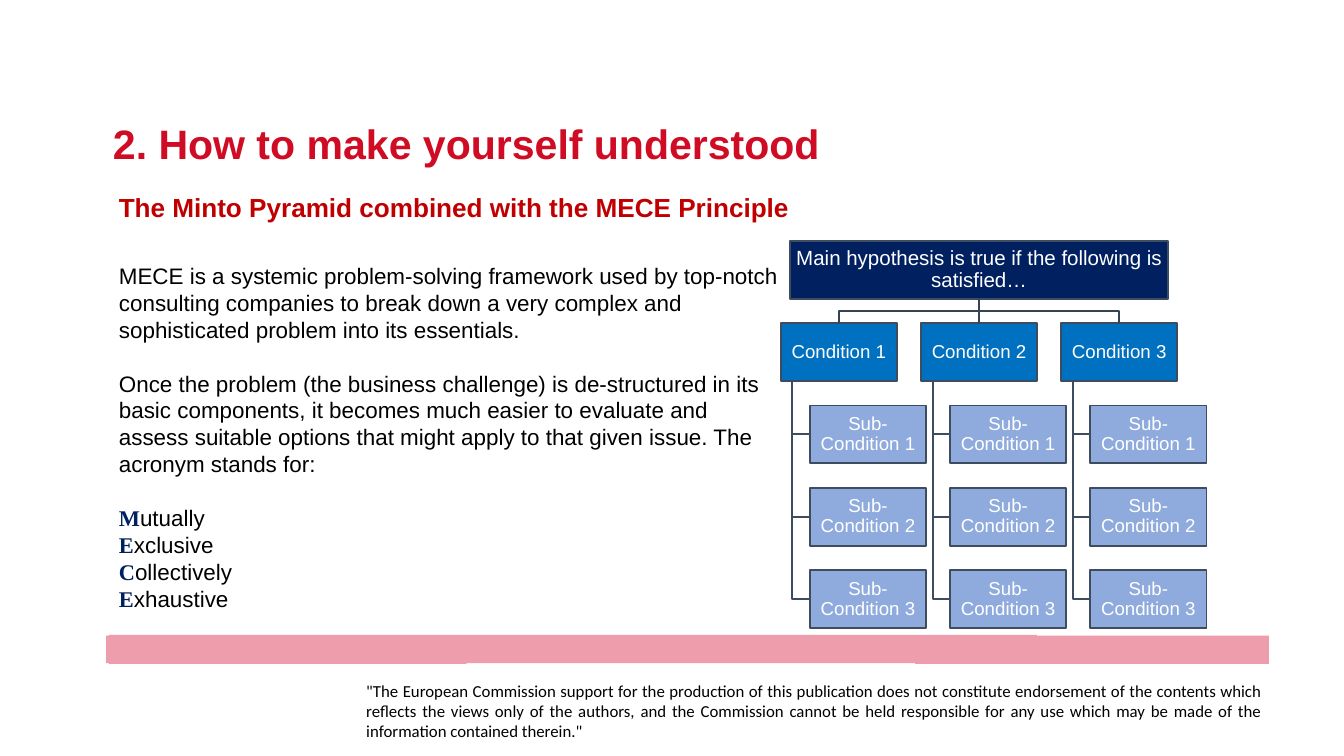
from lxml import etree
from pptx import Presentation
from pptx.dml.color import RGBColor
from pptx.enum.shapes import MSO_CONNECTOR, MSO_SHAPE
from pptx.enum.text import MSO_ANCHOR, MSO_AUTO_SIZE, PP_ALIGN
from pptx.oxml.ns import qn
from pptx.util import Pt

RECT, STRAIGHT = MSO_SHAPE.RECTANGLE, MSO_CONNECTOR.STRAIGHT
TOP, MIDDLE = MSO_ANCHOR.TOP, MSO_ANCHOR.MIDDLE
LEFT, CENTER, JUSTIFY = PP_ALIGN.LEFT, PP_ALIGN.CENTER, PP_ALIGN.JUSTIFY
NO_FIT = MSO_AUTO_SIZE.NONE

# Content
TITLE = "2. How to make yourself understood"
SUBTITLE = "The Minto Pyramid combined with the MECE Principle"
INTRO = [
    "MECE is a systemic problem-solving framework used by top-notch consulting "
    "companies to break down a very complex and sophisticated problem into its essentials.",
    "Once the problem (the business challenge) is de-structured in its basic components, "
    "it becomes much easier to evaluate and assess suitable options that might apply to "
    "that given issue. The acronym stands for:",
]
ACRONYM = ["Mutually", "Exclusive", "Collectively", "Exhaustive"]
HYPOTHESIS = "Main hypothesis is true if the following is satisfied…"
CONDITIONS = ["Condition 1", "Condition 2", "Condition 3"]
SUB_CONDITIONS = ["Sub-Condition 1", "Sub-Condition 2", "Sub-Condition 3"]
DISCLAIMER = (
    '"The European Commission support for the production of this publication does not '
    "constitute endorsement of the contents which reflects the views only of the authors, "
    "and the Commission cannot be held responsible for any use which may be made of the "
    'information contained therein."'
)

THEME = {
    "font": "Arial", "initial_font": "Times New Roman", "footer_font": "Calibri",
    "title": "D00B24", "subtitle": "C00000", "text": "000000", "light": "FFFFFF",
    "navy": "002060", "blue": "0070C0", "pale": "8FAADC",
    "outline": "3E4C60", "branch": "364355", "band": "ED9DAB",
    "title_size": 44, "subtitle_size": 28, "body_size": 24,
    "main_size": 22, "box_size": 20, "footer_size": 18,
    "line": 2, "gap": 28.8,
}

# Tree grid, in points
CENTRE_X, TREE_TOP = 1049, 258
MAIN_W, BOX_W, BOX_H = 404.6, 124.6, 62
COL_PITCH, ROW_PITCH = 150.2, 88.2
SUB_INDENT, TRUNK_INDENT = 31.2, 12.5

# Band outline, in points
BAND = [(1359.4, 681), (1111, 681), (1111, 680.3), (116.6, 680.3), (116.6, 681),
        (113.8, 681), (113.8, 710.6), (116.6, 710.6), (116.6, 711.4), (499.7, 711.4),
        (499.7, 710.6), (980.6, 710.6), (980.6, 711.4), (1359.4, 711.4)]


def rgb(name):
    return RGBColor.from_string(THEME[name])


def write(tf, paragraphs, size, color="text", font="font", bold=False, align=LEFT,
          anchor=TOP, inset=(7.2, 3.6), spacing=1.0, gaps=()):
    """Fill a frame; a paragraph is a string or a list of (text, run format) pairs."""
    tf.word_wrap, tf.auto_size, tf.vertical_anchor = True, NO_FIT, anchor
    tf.margin_left = tf.margin_right = Pt(inset[0])
    tf.margin_top = tf.margin_bottom = Pt(inset[1])
    for i, runs in enumerate(paragraphs):
        p = tf.paragraphs[0] if i == 0 else tf.add_paragraph()
        pPr = p._p.get_or_add_pPr()
        pPr.set("marL", "0")
        pPr.set("indent", "0")
        etree.SubElement(pPr, qn("a:buNone"))
        p.alignment, p.line_spacing = align, spacing
        p.space_before = Pt(THEME["gap"] if i in gaps else 0)
        for text, style in [(runs, {})] if isinstance(runs, str) else runs:
            r = p.add_run()
            r.text = text
            r.font.size = Pt(THEME[size])
            r.font.name = THEME[style.get("font", font)]
            r.font.bold = style.get("bold", bold)
            r.font.color.rgb = rgb(style.get("color", color))


def place(sp, x, y, w, h):
    sp.left, sp.top, sp.width, sp.height = Pt(x), Pt(y), Pt(w), Pt(h)
    return sp.text_frame


def text_box(s, x, y, w, h):
    return s.shapes.add_textbox(Pt(x), Pt(y), Pt(w), Pt(h)).text_frame


def box(s, text, x, y, w, fill, size="box_size", inset=0.9):
    sp = s.shapes.add_shape(RECT, Pt(x), Pt(y), Pt(w), Pt(BOX_H))
    sp.shadow.inherit = False
    sp.fill.solid()
    sp.fill.fore_color.rgb = rgb(fill)
    sp.line.color.rgb = rgb("outline")
    sp.line.width = Pt(THEME["line"])
    write(sp.text_frame, [text], size, color="light", align=CENTER, anchor=MIDDLE,
          inset=(inset, inset), spacing=0.9)
    return sp


def outline(s, points, close=False):
    start, *rest = [(Pt(x), Pt(y)) for x, y in points]
    builder = s.shapes.build_freeform(*start)
    builder.add_line_segments(rest, close=close)
    sp = builder.convert_to_shape()
    sp.shadow.inherit = False
    return sp


def elbow(s, points, color):
    sp = outline(s, points)
    sp.fill.background()
    sp.line.color.rgb = rgb(color)
    sp.line.width = Pt(THEME["line"])


def join(s, upper, lower):
    line = s.shapes.add_connector(STRAIGHT, 0, 0, 0, 0)
    line.begin_connect(upper, 2)
    line.end_connect(lower, 0)
    line.line.color.rgb = rgb("branch")
    line.line.width = Pt(THEME["line"])
    etree.SubElement(line._element.spPr, qn("a:effectLst"))


def draw_tree(s):
    main = box(s, HYPOTHESIS, CENTRE_X - MAIN_W / 2, TREE_TOP, MAIN_W, "navy",
               size="main_size", inset=1.4)
    main_bottom, row_top = TREE_TOP + BOX_H, TREE_TOP + ROW_PITCH
    bus_y = (main_bottom + row_top) / 2
    middle = len(CONDITIONS) // 2
    for col, condition in enumerate(CONDITIONS):
        cx = CENTRE_X + (col - middle) * COL_PITCH
        x = cx - BOX_W / 2
        head = box(s, condition, x, row_top, BOX_W, "blue")
        if col == middle:
            join(s, main, head)
        else:
            elbow(s, [(CENTRE_X, main_bottom), (CENTRE_X, bus_y), (cx, bus_y),
                      (cx, row_top)], "branch")
        for row, sub in enumerate(SUB_CONDITIONS, start=1):
            y = row_top + row * ROW_PITCH
            box(s, sub, x + SUB_INDENT, y, BOX_W, "pale")
            trunk, mid_y = x + TRUNK_INDENT, y + BOX_H / 2
            elbow(s, [(trunk, row_top + BOX_H), (trunk, mid_y),
                      (x + SUB_INDENT, mid_y)], "outline")


def main():
    prs = Presentation()
    prs.slide_width, prs.slide_height = Pt(1440), Pt(810)
    s = prs.slides.add_slide(prs.slide_layouts[1])

    # Band and disclaimer
    band = outline(s, BAND, close=True)
    band.fill.solid()
    band.fill.fore_color.rgb = rgb("band")
    band.line.fill.background()
    write(text_box(s, 392.4, 730.8, 959.8, 54.7), [DISCLAIMER], "footer_size",
          font="footer_font", align=JUSTIFY, inset=(0, 0), spacing=0.98)

    # Title, subtitle and body
    write(place(s.shapes.title, 113.8, 123.8, 969, 60.5), [TITLE], "title_size",
          color="title", bold=True)
    write(text_box(s, 120.2, 201.6, 1249, 75), [SUBTITLE], "subtitle_size",
          color="subtitle", bold=True)
    initial = {"font": "initial_font", "color": "navy", "bold": True}
    words = [[(word[0], initial), (word[1:], {})] for word in ACRONYM]
    write(place(s.placeholders[1], 120.2, 277.2, 722.2, 385), INTRO + words,
          "body_size", gaps=(1, len(INTRO)))

    # Hypothesis tree
    draw_tree(s)
    prs.save("out.pptx")


if __name__ == "__main__":
    main()
